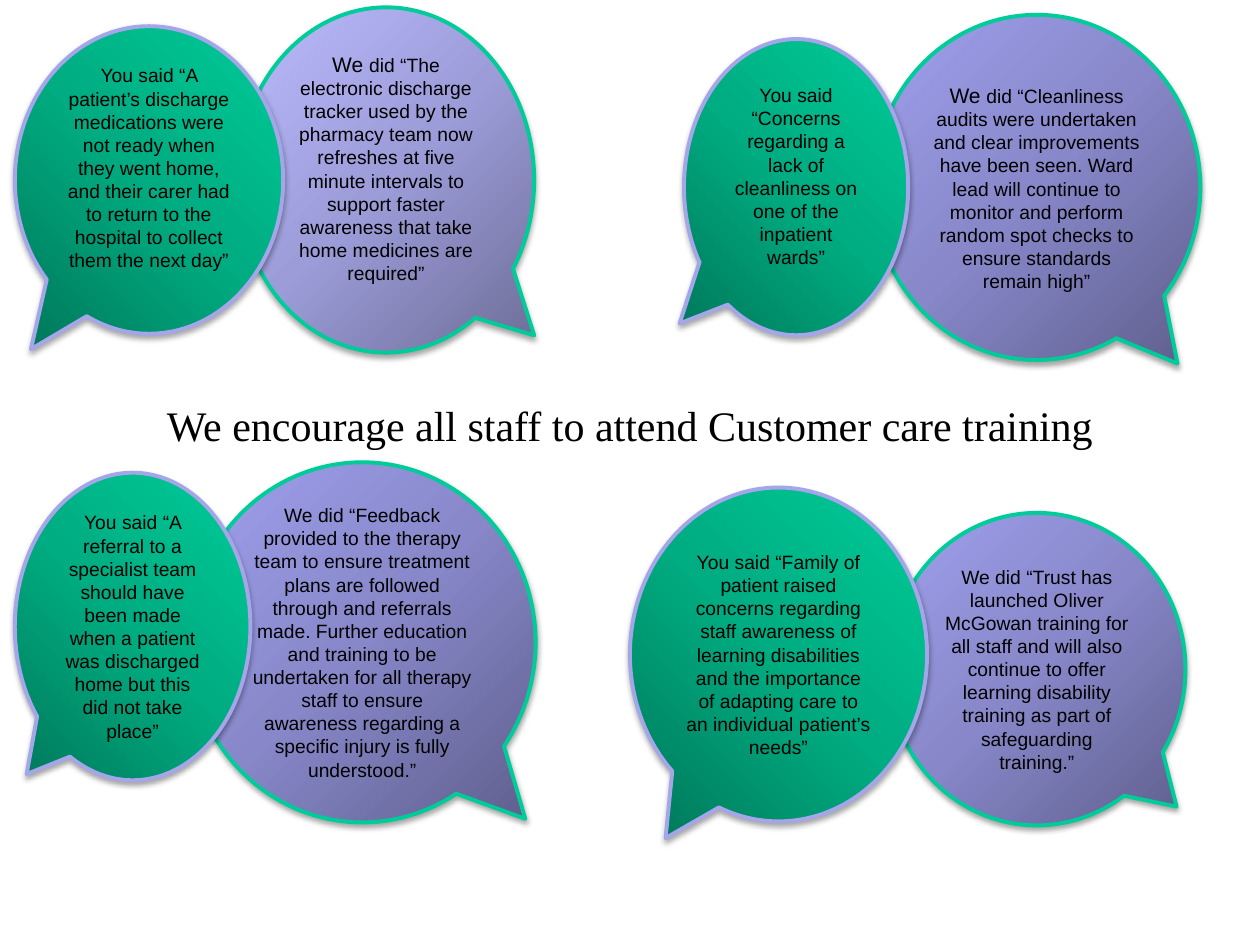
from lxml.etree import SubElement
from pptx import Presentation
from pptx.dml.color import RGBColor
from pptx.enum.shapes import MSO_SHAPE
from pptx.enum.text import MSO_ANCHOR, MSO_AUTO_SIZE, PP_ALIGN
from pptx.oxml import parse_xml
from pptx.oxml.ns import nsdecls, qn
from pptx.util import Cm, Pt

TITLE = "We encourage all staff to attend Customer care training"

# Gradient stops, line colour and the corner the gradient starts from
GREEN = dict(stops=("00795B", "00AC81", "00CC99"), line="A5A5E9", corner="left")
VIOLET = dict(stops=("5F5F8D", "8787C9", "A0A0EE"), line="00CC99", corner="right")
PALE = dict(VIOLET, stops=("6E6E98", "9C9CD9", "BBBBFF"))

# Back to front: style, (left, top, width, height) in cm, pointer tip,
# extra room below the text in cm, runs of (text, size)
BUBBLES = [
    (VIOLET, (17.91, 10.34, 5.99, 6.3), (0.47, 0.44), 0, [
        ("We did “Trust has launched Oliver McGowan training for all staff and will "
         "also continue to offer learning disability training as part of "
         "safeguarding training.”", 11)]),
    (VIOLET, (3.81, 9.32, 6.99, 7.26), (0.47, 0.49), 0, [
        ("We did “Feedback provided to the therapy team to ensure treatment plans "
         "are followed through and referrals made. Further education and training "
         "to be undertaken for all therapy staff to ensure awareness regarding a "
         "specific injury is fully understood.”", 11)]),
    (GREEN, (0.3, 9.53, 4.75, 6.2), (-0.45, 0.48), 0, [
        ("You said “A referral to a specialist team should have been made when a "
         "patient was discharged home but this did not take place”", 11)]),
    (PALE, (4.8, 0.15, 5.97, 6.96), (0.5, 0.45), 0.49, [
        ("We ", 12),
        ("did “The electronic discharge tracker used by the pharmacy team now "
         "refreshes at five minute intervals to support faster awareness that take "
         "home medicines are required”", 11)]),
    (VIOLET, (17.6, 0.3, 6.6, 6.96), (0.43, 0.51), 0, [
        ("We ", 12),
        ("did “Cleanliness audits were undertaken and clear improvements have been "
         "seen. Ward lead will continue to monitor and perform random spot checks "
         "to ensure standards remain high”", 11)]),
    (GREEN, (12.7, 9.83, 5.99, 6.73), (-0.38, 0.55), 0, [
        ("You said “Family of patient raised concerns regarding staff awareness of "
         "learning disabilities and the importance of adapting care to an "
         "individual patient’s needs”", 11)]),
    (GREEN, (13.79, 0.79, 4.52, 5.97), (-0.52, 0.46), 0.45, [
        ("You said “Concerns regarding a lack of cleanliness on one of the "
         "inpatient wards”", 11)]),
    (GREEN, (0.3, 0.53, 5.41, 6.2), (-0.44, 0.55), 0.49, [
        ("You said “A patient’s discharge medications were not ready when they went "
         "home, and their carer had to return to the hospital to collect them the "
         "next day”", 11)]),
]


def rgb(value):
    return RGBColor.from_string(value)


def write(tf, runs, font):
    p = tf.paragraphs[0]
    p.alignment = PP_ALIGN.CENTER
    for text, size in runs:
        r = p.add_run()
        r.text = text
        for name, value in dict(name=font, size=Pt(size)).items():
            setattr(r.font, name, value)
        r.font.color.rgb = rgb("000000")


def gradient(stops, corner):
    left, right = (0, 100000) if corner == "left" else (100000, 0)
    gs = "".join(f'<a:gs pos="{i * 50000}"><a:srgbClr val="{c}"/></a:gs>'
                 for i, c in enumerate(stops))
    return parse_xml(
        f'<a:gradFill {nsdecls("a")} rotWithShape="1"><a:gsLst>{gs}</a:gsLst>'
        f'<a:path path="circle"><a:fillToRect l="{left}" t="100000" r="{right}" b="0"/>'
        '</a:path></a:gradFill>')


def add_shadow(sp):
    sp.shadow.inherit = False
    effects = sp._element.spPr.find(qn("a:effectLst"))
    outer = SubElement(effects, qn("a:outerShdw"), blurRad="40000", dist="23000",
                       dir="5400000", rotWithShape="0")
    color = SubElement(outer, qn("a:srgbClr"), val="000000")
    SubElement(color, qn("a:alpha"), val="35000")


def add_bubble(s, style, box, tip, room, runs):
    sp = s.shapes.add_shape(MSO_SHAPE.OVAL_CALLOUT, *map(Cm, box))
    for i, value in enumerate(tip):
        sp.adjustments[i] = value
    sp.line.color.rgb = rgb(style["line"])
    sp.line.width = Pt(2.25)
    sp._element.spPr.find(qn("a:ln")).addprevious(
        gradient(style["stops"], style["corner"]))
    add_shadow(sp)
    tf = sp.text_frame
    layout = dict(word_wrap=True, vertical_anchor=MSO_ANCHOR.MIDDLE,
                  margin_bottom=Cm(0.13 + room))
    for name, value in layout.items():
        setattr(tf, name, value)
    write(tf, runs, "Arial")


def main():
    prs = Presentation()
    prs.slide_width, prs.slide_height = Cm(25.4), Cm(19.05)
    s = prs.slides.add_slide(prs.slide_layouts[6])

    # Central message
    tf = s.shapes.add_textbox(Cm(1.91), Cm(7.92), Cm(21.59), Cm(1.27)).text_frame
    tf.word_wrap = True
    tf.auto_size = MSO_AUTO_SIZE.SHAPE_TO_FIT_TEXT
    write(tf, [(TITLE, 24)], "Times New Roman")

    # Speech bubbles
    for bubble in BUBBLES:
        add_bubble(s, *bubble)

    prs.save("out.pptx")


if __name__ == "__main__":
    main()
